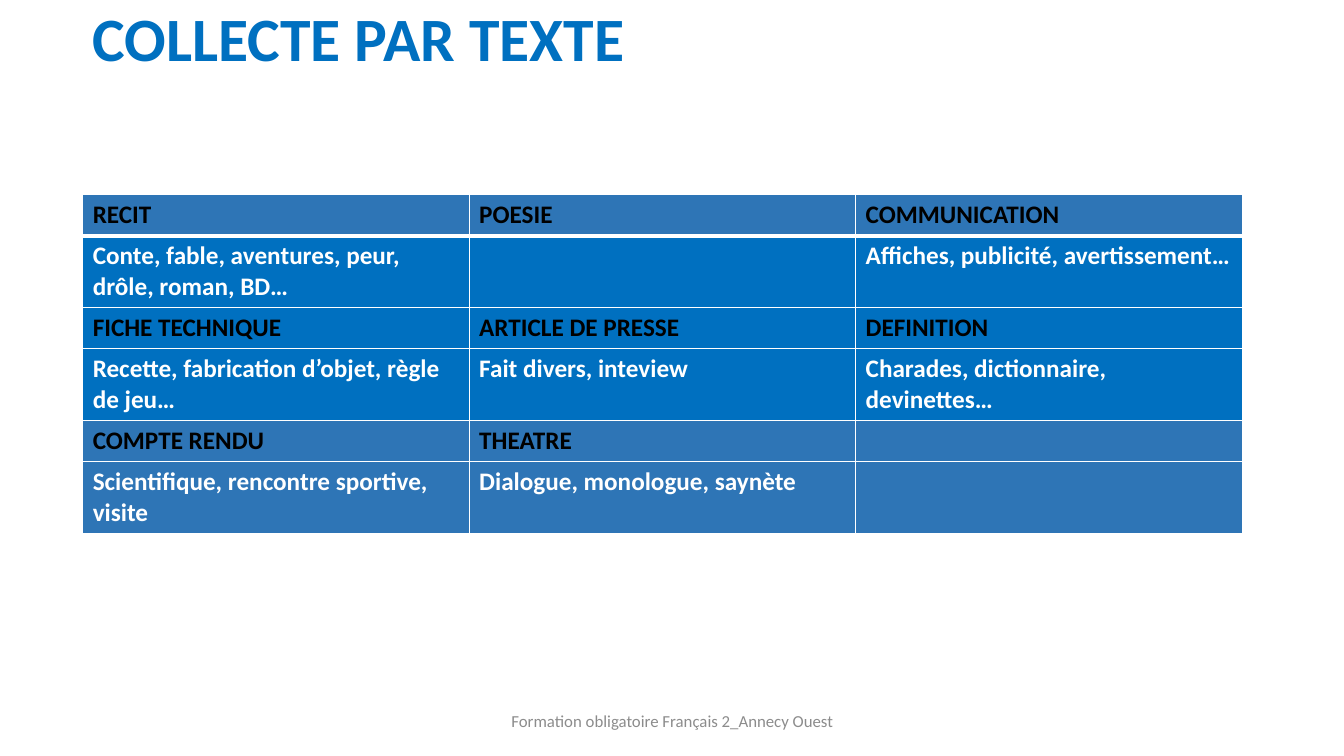
import pptx
import pptx.dml.color
import pptx.enum.text
import pptx.oxml
import pptx.oxml.ns
import pptx.util

Inches = pptx.util.Inches
BLUE, STEEL, WHITE, BLACK, GREY = "0070C0", "2E75B6", "FFFFFF", "000000", "8C8C8C"

GENRES = [
    (STEEL, ["RECIT", "POESIE", "COMMUNICATION"]),
    (BLUE, ["Conte, fable, aventures, peur, drôle, roman, BD…", "",
            "Affiches, publicité, avertissement…"]),
    (BLUE, ["FICHE TECHNIQUE", "ARTICLE DE PRESSE", "DEFINITION"]),
    (BLUE, ["Recette, fabrication d’objet, règle de jeu…", "Fait divers, inteview",
            "Charades, dictionnaire, devinettes…"]),
    (STEEL, ["COMPTE RENDU", "THEATRE", ""]),
    (STEEL, ["Scientifique, rencontre sportive, visite", "Dialogue, monologue, saynète", ""]),
]


def rgb(value):
    """Turn a hex string into a colour."""
    return pptx.dml.color.RGBColor.from_string(value)


def style(paragraph, color, **formats):
    """Apply the shared font, a colour and further font values."""
    for name, value in {"name": "Calibri", **formats}.items():
        setattr(paragraph.font, name, value)
    paragraph.font.color.rgb = rgb(color)


def add_line(slide, box, words, color, paragraph_formats, **formats):
    """Place one vertically centred line of text in the box."""
    frame = slide.shapes.add_textbox(*map(Inches, box)).text_frame
    frame.word_wrap = True
    frame.vertical_anchor = pptx.enum.text.MSO_ANCHOR.MIDDLE
    paragraph = frame.paragraphs[0]
    paragraph.text = words
    for name, value in paragraph_formats.items():
        setattr(paragraph, name, value)
    style(paragraph, color, **formats)


def add_borders(cell, widths):
    """Give the cell white borders of the given widths in points."""
    properties = cell._tc.get_or_add_tcPr()
    for position, (side, width) in enumerate(widths.items()):
        properties.insert(position, pptx.oxml.parse_xml(
            f'<a:ln{side} {pptx.oxml.ns.nsdecls("a")} w="{pptx.util.Pt(width)}">'
            f'<a:solidFill><a:srgbClr val="{WHITE}"/></a:solidFill></a:ln{side}>'))


def add_genres(slide, box):
    """Place the table of text genres, headings alternating with examples."""
    columns = len(GENRES[0][1])
    table = slide.shapes.add_table(len(GENRES), columns, *map(Inches, box)).table
    for column in table.columns:
        column.width = Inches(box[2] / columns)
    for index, (fill, entries) in enumerate(GENRES):
        is_heading = index % 2 == 0
        table.rows[index].height = Inches(0.41 if is_heading else 0.71)
        for column, words in enumerate(entries):
            cell = table.cell(index, column)
            cell.text = words
            cell.fill.solid()
            cell.fill.fore_color.rgb = rgb(fill)
            style(cell.text_frame.paragraphs[0], BLACK if is_heading else WHITE,
                  size=pptx.util.Pt(18), bold=True)
            add_borders(cell, {"L": 1, "R": 1, "T": 3 if index == 1 else 1,
                               "B": 3 if index == 0 else 1})


def main():
    """Build the slide and save it."""
    deck = pptx.Presentation()
    deck.slide_width, deck.slide_height = Inches(13.33), Inches(7.5)
    slide = deck.slides.add_slide(deck.slide_layouts[6])
    add_line(slide, (0.82, 0, 11.5, 0.83), "COLLECTE PAR TEXTE", BLUE,
             {"line_spacing": 0.9}, size=pptx.util.Pt(44), bold=True)
    add_genres(slide, (0.82, 1.93, 11.5, 3.36))
    add_line(slide, (4.42, 6.95, 4.5, 0.4), "Formation obligatoire Français 2_Annecy Ouest", GREY,
             {"alignment": pptx.enum.text.PP_ALIGN.CENTER}, size=pptx.util.Pt(12))
    deck.save("out.pptx")


if __name__ == "__main__":
    main()
